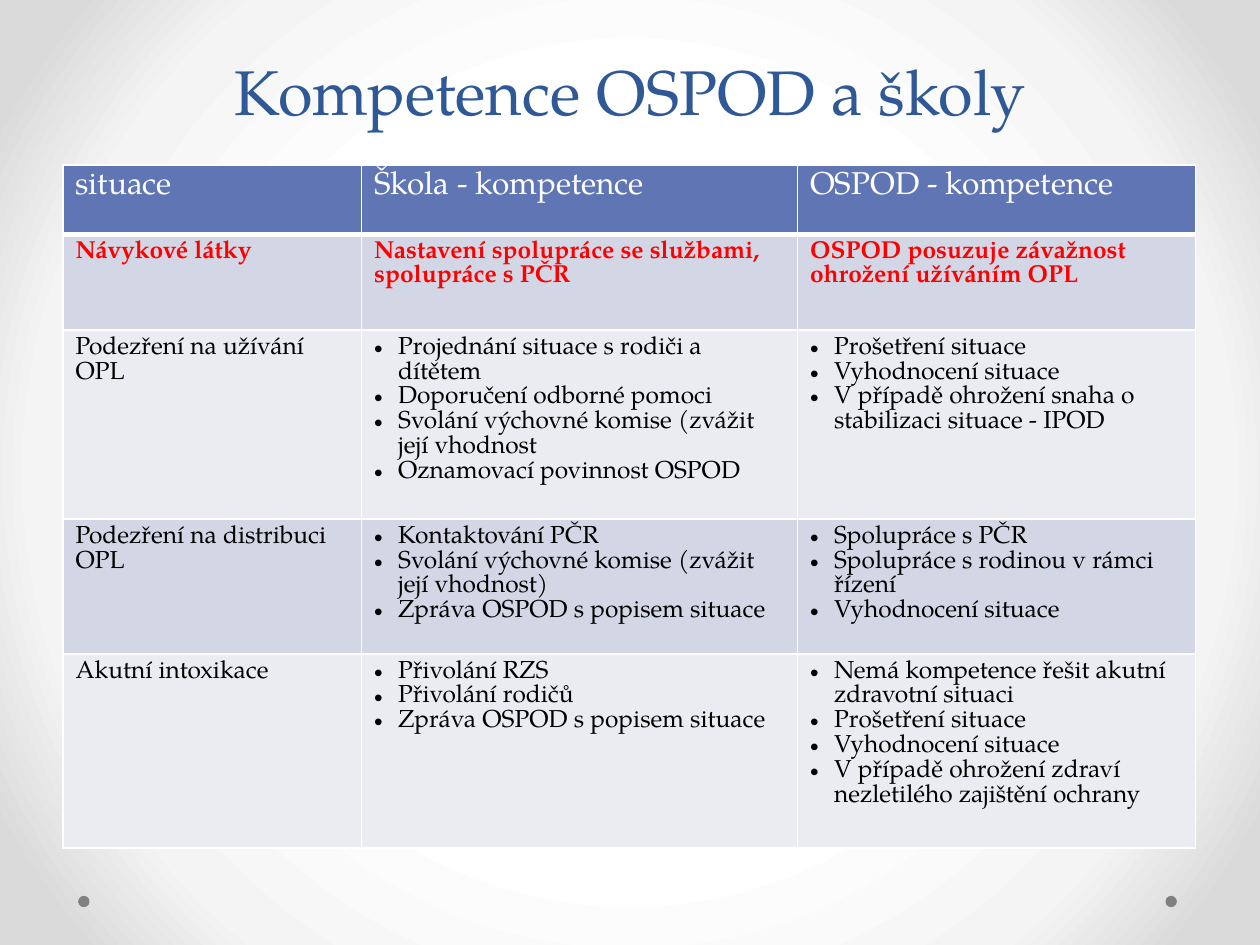
from lxml.etree import SubElement
from pptx import Presentation
from pptx.dml.color import RGBColor
from pptx.enum.shapes import MSO_SHAPE
from pptx.enum.text import MSO_ANCHOR, PP_ALIGN
from pptx.oxml.ns import qn
from pptx.util import Inches, Pt

FONT = "TeX Gyre Pagella"
WIDTHS = [2.37, 3.46, 3.16]
HEIGHTS = [0.55, 0.76, 1.21, 1.07, 1.54]
FILLS = ["6076B4", "D2D6E5", "EAECF2", "D2D6E5", "EAECF2"]
ROWS = [
    ["situace", "Škola - kompetence", "OSPOD - kompetence"],
    ["Návykové látky",
     "Nastavení spolupráce se službami, spolupráce s PČR",
     "OSPOD posuzuje závažnost ohrožení užíváním OPL"],
    ["Podezření na užívání OPL",
     ["Projednání situace s rodiči a dítětem",
      "Doporučení odborné pomoci",
      "Svolání výchovné komise (zvážit její vhodnost",
      "Oznamovací povinnost OSPOD"],
     ["Prošetření situace",
      "Vyhodnocení situace",
      "V případě ohrožení snaha o stabilizaci situace - IPOD"]],
    ["Podezření na distribuci OPL",
     ["Kontaktování PČR",
      "Svolání výchovné komise (zvážit její vhodnost)",
      "Zpráva OSPOD s popisem situace"],
     ["Spolupráce s PČR",
      "Spolupráce s rodinou v rámci řízení",
      "Vyhodnocení situace"]],
    ["Akutní intoxikace",
     ["Přivolání RZS",
      "Přivolání rodičů",
      "Zpráva OSPOD s popisem situace"],
     ["Nemá kompetence řešit akutní zdravotní situaci",
      "Prošetření situace",
      "Vyhodnocení situace",
      "V případě ohrožení zdraví nezletilého zajištění ochrany"]],
]


def color(code):
    """Turn a hex string into a colour."""
    return RGBColor.from_string(code)


def add_run(para, text, size, code, bold=False):
    """Add one styled run to a paragraph."""
    run = para.add_run()
    run.text = text
    font = run.font
    font.name, font.size, font.bold = FONT, Pt(size), bold
    font.color.rgb = color(code)


def add_backdrop(slide):
    """Fill the background with a round white to grey gradient."""
    slide.background.fill.gradient()
    grad = next(slide.element.iter(qn("a:gradFill")))
    for part in list(grad):
        grad.remove(part)
    stops = SubElement(grad, qn("a:gsLst"))
    for place, code in [(50, "FFFFFF"), (76, "F4F4F4"), (92, "DADADA")]:
        stop = SubElement(stops, qn("a:gs"), pos=str(place * 1000))
        SubElement(stop, qn("a:srgbClr"), val=code)
    ring = SubElement(grad, qn("a:path"), path="circle")
    SubElement(ring, qn("a:fillToRect"), l="50000", t="50000", r="50000", b="50000")


def add_dots(slide, left, top, width, size):
    """Place a grey dot at each end of the given strip."""
    for x in (left, left + width - size):
        dot = slide.shapes.add_shape(
            MSO_SHAPE.OVAL, Inches(x), Inches(top), Inches(size), Inches(size))
        dot.shadow.inherit = False
        dot.fill.solid()
        dot.fill.fore_color.rgb = color("808080")
        dot.line.fill.background()


def add_title(slide, left, top, width, height):
    """Place the centred title at the bottom of its box."""
    box = slide.shapes.add_textbox(
        Inches(left), Inches(top), Inches(width), Inches(height))
    frame = box.text_frame
    frame.word_wrap = True
    frame.vertical_anchor = MSO_ANCHOR.BOTTOM
    para = frame.paragraphs[0]
    para.alignment = PP_ALIGN.CENTER
    para.line_spacing = Pt(58)
    add_run(para, "Kompetence OSPOD a školy", 36, "2F5897")


def set_edges(cell, base):
    """Draw white cell borders, with the given bottom width."""
    props = cell._tc.get_or_add_tcPr()
    for spot, (tag, width) in enumerate(
            [("lnL", 1), ("lnR", 1), ("lnT", 1), ("lnB", base)]):
        line = SubElement(props, qn("a:" + tag), w=str(Pt(width)))
        fill = SubElement(line, qn("a:solidFill"))
        SubElement(fill, qn("a:srgbClr"), val="FFFFFF")
        props.insert(spot, line)


def add_bullet(para):
    """Give a paragraph a hanging bullet."""
    props = para._p.get_or_add_pPr()
    props.set("marL", str(Inches(0.19)))
    props.set("indent", str(-Inches(0.19)))
    SubElement(props, qn("a:buFont"), typeface="Arial")
    SubElement(props, qn("a:buChar"), char="•")


def fill_cell(cell, content, row):
    """Write and style one cell according to its row."""
    cell.fill.solid()
    cell.fill.fore_color.rgb = color(FILLS[row])
    set_edges(cell, 3 if row == 0 else 1)
    size, code, bold = {0: (18, "FFFFFF", False),
                        1: (14, "FF0000", True)}.get(row, (14, "000000", False))
    listed = isinstance(content, list)
    frame = cell.text_frame
    for index, text in enumerate(content if listed else [content]):
        para = frame.add_paragraph() if index else frame.paragraphs[0]
        if listed:
            add_bullet(para)
        add_run(para, text, size, code, bold)


def add_grid(slide, left, top):
    """Place the table of duties with its corner at the given point."""
    table = slide.shapes.add_table(
        len(ROWS), len(WIDTHS), Inches(left), Inches(top),
        Inches(sum(WIDTHS)), Inches(sum(HEIGHTS))).table
    for column, width in zip(table.columns, WIDTHS):
        column.width = Inches(width)
    for row, height in enumerate(HEIGHTS):
        table.rows[row].height = Inches(height)
        for col, content in enumerate(ROWS[row]):
            fill_cell(table.cell(row, col), content, row)


def main():
    """Build and save the slide."""
    deck = Presentation()
    deck.slide_width, deck.slide_height = Inches(10), Inches(7.5)
    slide = deck.slides.add_slide(deck.slide_layouts[6])
    add_backdrop(slide)
    add_dots(slide, 0.62, 7.11, 8.72, 0.09)
    add_title(slide, 0.5, 0, 9, 1.07)
    add_grid(slide, 0.5, 1.31)
    deck.save("out.pptx")


if __name__ == "__main__":
    main()
